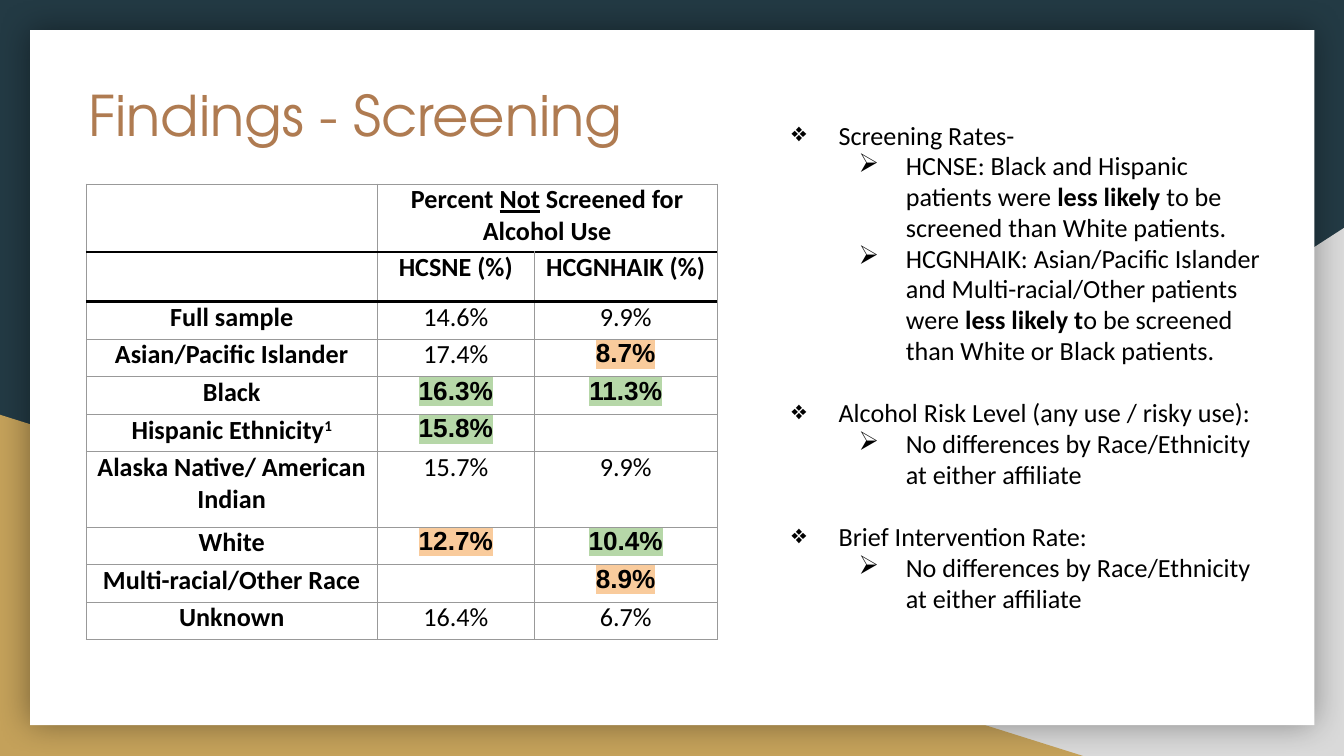
from dataclasses import dataclass

from lxml import etree
from pptx import Presentation
from pptx.dml.color import RGBColor
from pptx.enum.shapes import MSO_SHAPE
from pptx.enum.text import MSO_ANCHOR, MSO_AUTO_SIZE, PP_ALIGN
from pptx.oxml.ns import qn
from pptx.util import Cm, Pt

TRIANGLE, RECTANGLE = MSO_SHAPE.RIGHT_TRIANGLE, MSO_SHAPE.RECTANGLE
TOP = MSO_ANCHOR.TOP
NO_AUTOFIT = MSO_AUTO_SIZE.NONE
LEFT, CENTER = PP_ALIGN.LEFT, PP_ALIGN.CENTER
TITLE_ONLY = 5


@dataclass(frozen=True)
class Theme:
    background: str = "233A44"
    gold: str = "C4A15A"
    silver: str = "D9D9D9"
    card: str = "FFFFFF"
    title: str = "AF7B51"
    text: str = "000000"
    grid: str = "999999"
    higher: str = "B6D7A8"
    lower: str = "F9CB9C"
    title_font: str = "TeX Gyre Adventor"
    body_font: str = "Calibri"
    marked_font: str = "Arial"
    title_size: int = 30
    body_size: int = 14
    thin_line: float = 0.5
    heavy_line: float = 1.5


THEME = Theme()

TITLE = "Findings - Screening"

# A cell is a list of (text, style) runs; styles: bold, underline, super, higher, lower
HEADERS = [
    [[], [("Percent ", "bold"), ("Not", "bold underline"),
          (" Screened for Alcohol Use", "bold")], []],
    [[], [("HCSNE (%)", "bold")], [("HCGNHAIK (%)", "bold")]],
]
RATES = [
    ("Full sample", ("14.6%", ""), ("9.9%", "")),
    ("Asian/Pacific Islander", ("17.4%", ""), ("8.7%", "lower")),
    ("Black", ("16.3%", "higher"), ("11.3%", "higher")),
    ("Hispanic Ethnicity", ("15.8%", "higher"), None),
    ("Alaska Native/ American Indian", ("15.7%", ""), ("9.9%", "")),
    ("White", ("12.7%", "lower"), ("10.4%", "higher")),
    ("Multi-racial/Other Race", None, ("8.9%", "lower")),
    ("Unknown", ("16.4%", ""), ("6.7%", "")),
]
FOOTNOTES = {"Hispanic Ethnicity": "1"}

# (heading, points), each point a list of runs
NO_DIFFERENCES = [("No differences by Race/Ethnicity at either affiliate", "")]
FINDINGS = [
    ("Screening Rates-", [
        [("HCNSE: Black and Hispanic patients were ", ""), ("less likely", "bold"),
         (" to be screened than White patients.", "")],
        [("HCGNHAIK: Asian/Pacific Islander and Multi-racial/Other patients were", ""),
         (" less likely t", "bold"),
         ("o be screened than White or Black patients.", "")],
    ]),
    ("Alcohol Risk Level (any use / risky use):", [NO_DIFFERENCES]),
    ("Brief Intervention Rate:", [NO_DIFFERENCES]),
]

SLIDE_SIZE = Cm(25.4), Cm(14.29)
TITLE_BOX = Cm(1.42), Cm(1.27), Cm(20.85), Cm(2.64)
FINDINGS_BOX = Cm(14.33), Cm(2.03), Cm(10), Cm(10.08)
TABLE_ORIGIN = Cm(1.63), Cm(3.48)
COLUMN_WIDTHS = Cm(5.5), Cm(2.97), Cm(3.45)
HEADER_HEIGHTS = Cm(1.28), Cm(0.94)
LINE_HEIGHT = Cm(0.71)
HEAVY_RULES = (1, 2)
CELL_MARGIN = Cm(0.18)
TEXT_MARGIN = Cm(0.25)
BULLETS = ("❖", "➢")
INDENT_STEP, HANGING = Cm(1.27), Cm(0.89)
GROUP_GAP = Pt(17)


def color(value):
    return RGBColor.from_string(value)


def add_solid_fill(parent, value):
    fill = etree.SubElement(parent, qn("a:solidFill"))
    return etree.SubElement(fill, qn("a:srgbClr"), val=value)


def add_backdrop(slide, kind, left, top, width, height, fill):
    shape = slide.shapes.add_shape(kind, left, top, width, height)
    shape.shadow.inherit = False
    shape.fill.solid()
    shape.fill.fore_color.rgb = color(fill)
    shape.line.fill.background()
    return shape


def add_glow_shadow(shape):
    """Give the shape a soft shadow on all sides."""
    effects = shape._element.spPr.find(qn("a:effectLst"))
    shadow = etree.SubElement(effects, qn("a:outerShdw"), blurRad=str(Pt(18)),
                              dist="0", dir="0", algn="ctr", rotWithShape="0")
    tone = etree.SubElement(shadow, qn("a:srgbClr"), val=THEME.text)
    etree.SubElement(tone, qn("a:alpha"), val="40000")


def set_margins(frame):
    frame.margin_left = frame.margin_right = TEXT_MARGIN
    frame.margin_top = frame.margin_bottom = TEXT_MARGIN
    frame.word_wrap = True
    frame.vertical_anchor = TOP
    frame.auto_size = NO_AUTOFIT


def set_font(font, name, size, value):
    font.name, font.size = name, Pt(size)
    font.color.rgb = color(value)


def add_runs(paragraph, runs):
    set_font(paragraph.font, THEME.body_font, THEME.body_size, THEME.text)
    for text, style in runs:
        run = paragraph.add_run()
        run.text = text
        properties = run._r.get_or_add_rPr()
        marker = {"higher": THEME.higher, "lower": THEME.lower}.get(style)
        if marker:
            highlight = etree.SubElement(properties, qn("a:highlight"))
            etree.SubElement(highlight, qn("a:srgbClr"), val=marker)
            run.font.name = THEME.marked_font
        if marker or "bold" in style:
            run.font.bold = True
        if "underline" in style:
            run.font.underline = True
        if "super" in style:
            properties.set("baseline", "30000")
    if not runs:
        etree.SubElement(paragraph._p, qn("a:endParaRPr"), sz=str(THEME.body_size * 100))


def set_borders(cell, row):
    properties = cell._tc.get_or_add_tcPr()
    for side, rule in (("L", None), ("R", None), ("T", row), ("B", row + 1)):
        heavy = rule in HEAVY_RULES
        width = THEME.heavy_line if heavy else THEME.thin_line
        line = etree.SubElement(properties, qn(f"a:ln{side}"), w=str(Pt(width)))
        add_solid_fill(line, THEME.text if heavy else THEME.grid)


def rate_row(group, *rates):
    label = [(group, "bold")]
    if group in FOOTNOTES:
        label.append((FOOTNOTES[group], "bold super"))
    return [label] + [[rate] if rate else [] for rate in rates]


def add_rates_table(slide):
    rows = HEADERS + [rate_row(*rates) for rates in RATES]
    heights = list(HEADER_HEIGHTS)
    heights += [LINE_HEIGHT * (2 if len(group) > 25 else 1) for group, *_ in RATES]
    frame = slide.shapes.add_table(len(rows), len(COLUMN_WIDTHS), *TABLE_ORIGIN,
                                   sum(COLUMN_WIDTHS), sum(heights))
    table = frame.table
    table.first_row = table.horz_banding = False
    for column, width in zip(table.columns, COLUMN_WIDTHS):
        column.width = width
    for row_index, (content, height) in enumerate(zip(rows, heights)):
        table.rows[row_index].height = height
        for column_index, runs in enumerate(content):
            cell = table.cell(row_index, column_index)
            cell.margin_left = cell.margin_right = CELL_MARGIN
            cell.margin_top = cell.margin_bottom = 0
            cell.vertical_anchor = TOP
            set_borders(cell, row_index)
            cell.fill.background()
            paragraph = cell.text_frame.paragraphs[0]
            paragraph.alignment = CENTER
            add_runs(paragraph, runs)
    table.cell(0, 1).merge(table.cell(0, 2))


def add_findings(slide):
    frame = slide.shapes.add_textbox(*FINDINGS_BOX).text_frame
    set_margins(frame)
    lines = []
    for heading, points in FINDINGS:
        lines.append((0, [(heading, "")]))
        lines += [(1, point) for point in points]
    for index, (level, runs) in enumerate(lines):
        paragraph = frame.add_paragraph() if index else frame.paragraphs[0]
        paragraph.level = level
        paragraph.line_spacing = 0.98
        if index and level == 0:
            paragraph.space_before = GROUP_GAP
        properties = paragraph._p.get_or_add_pPr()
        properties.set("marL", str(INDENT_STEP * (level + 1)))
        properties.set("indent", str(-HANGING))
        etree.SubElement(properties, qn("a:buChar"), char=BULLETS[level])
        add_runs(paragraph, runs)


def format_title(slide):
    title = slide.shapes.title
    title.left, title.top, title.width, title.height = TITLE_BOX
    title.text = TITLE
    set_margins(title.text_frame)
    paragraph = title.text_frame.paragraphs[0]
    paragraph.alignment = LEFT
    set_font(paragraph.font, THEME.title_font, THEME.title_size, THEME.title)
    slide.shapes._spTree.append(title._element)  # bring in front of the card


def main():
    presentation = Presentation()
    presentation.slide_width, presentation.slide_height = SLIDE_SIZE
    slide = presentation.slides.add_slide(presentation.slide_layouts[TITLE_ONLY])
    slide.background.fill.solid()
    slide.background.fill.fore_color.rgb = color(THEME.background)

    silver = add_backdrop(slide, TRIANGLE, Cm(9.96), Cm(4.31), Cm(15.44), Cm(9.98), THEME.silver)
    silver._element.spPr.get_or_add_xfrm().set("flipH", "1")
    add_backdrop(slide, TRIANGLE, 0, Cm(7.84), Cm(20.47), Cm(6.45), THEME.gold)
    card = add_backdrop(slide, RECTANGLE, Cm(0.57), Cm(0.57), Cm(24.27), Cm(13.14), THEME.card)
    add_glow_shadow(card)

    add_rates_table(slide)
    format_title(slide)
    add_findings(slide)
    presentation.save("out.pptx")


if __name__ == "__main__":
    main()
